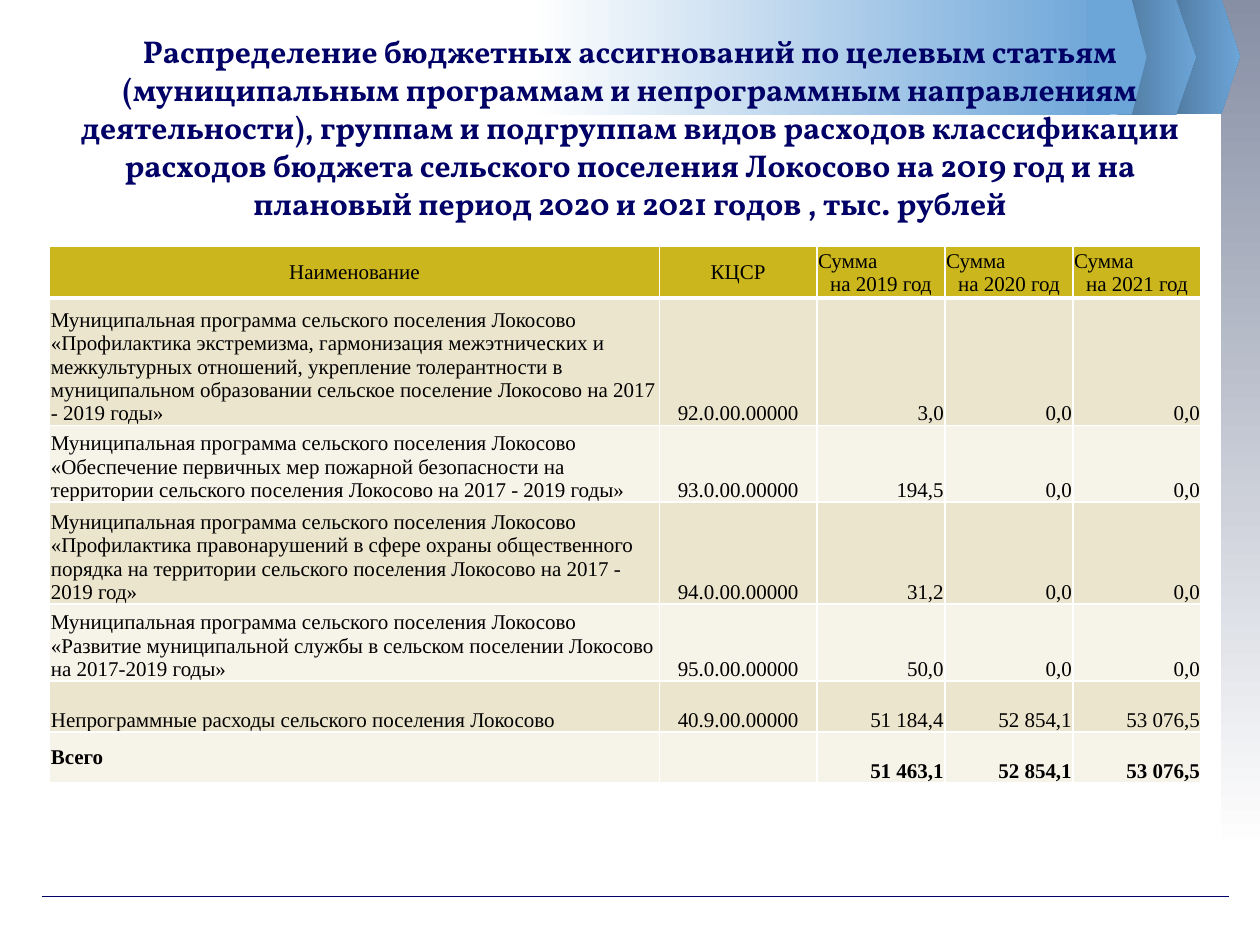
from lxml import etree
from pptx import Presentation
from pptx.dml.color import RGBColor
from pptx.enum import shapes, text
from pptx.oxml import ns
from pptx.util import Pt

NAVY = RGBColor(0x00, 0x00, 0x66)
BLACK = RGBColor(0x00, 0x00, 0x00)
WHITE = RGBColor(0xFF, 0xFF, 0xFF)
GREY = RGBColor(0x87, 0x8F, 0xA5)
STEEL = RGBColor(0x4D, 0x76, 0x9B)
SKY = RGBColor(0x6C, 0xA5, 0xD8)
GOLD = RGBColor(0xCB, 0xB6, 0x1D)
BANDS = [RGBColor(0xEC, 0xE5, 0xCD), RGBColor(0xF6, 0xF3, 0xE8)]

TITLE = (
    "Распределение бюджетных ассигнований по целевым статьям (муниципальным "
    "программам и непрограммным направлениям деятельности), группам и подгруппам "
    "видов расходов классификации расходов бюджета сельского поселения Локосово "
    "на 2019 год и на плановый период 2020 и 2021 годов , тыс. рублей"
)
PROGRAM = "Муниципальная программа сельского поселения Локосово "
BUDGET = [
    ("Наименование", "КЦСР", "Сумма\nна 2019 год", "Сумма\nна 2020 год", "Сумма\nна 2021 год"),
    (PROGRAM + "«Профилактика экстремизма, гармонизация межэтнических и межкультурных "
     "отношений, укрепление толерантности в муниципальном образовании сельское "
     "поселение Локосово на 2017 - 2019 годы»", "92.0.00.00000", "3,0", "0,0", "0,0"),
    (PROGRAM + "«Обеспечение первичных мер пожарной безопасности на территории "
     "сельского поселения Локосово на 2017 - 2019 годы»", "93.0.00.00000", "194,5", "0,0", "0,0"),
    (PROGRAM + "«Профилактика правонарушений в сфере охраны общественного порядка на "
     "территории сельского поселения Локосово на 2017 - 2019 год»",
     "94.0.00.00000", "31,2", "0,0", "0,0"),
    (PROGRAM + "«Развитие муниципальной службы в сельском поселении Локосово "
     "на 2017-2019 годы»", "95.0.00.00000", "50,0", "0,0", "0,0"),
    ("Непрограммные расходы сельского поселения Локосово", "40.9.00.00000",
     "51 184,4", "52 854,1", "53 076,5"),
    ("Всего", "", "51 463,1", "52 854,1", "53 076,5"),
]
COLUMN_WIDTHS = [348.4, 90, 73.2, 73.2, 73.2]
ROW_HEIGHTS = [29.2, 67.4, 40.6, 54.2, 40.8, 29.1, 29.1]
LEFT, CENTER, RIGHT = text.PP_ALIGN.LEFT, text.PP_ALIGN.CENTER, text.PP_ALIGN.RIGHT
ALIGNMENTS = [LEFT, CENTER, RIGHT, RIGHT, RIGHT]

RECT, PLATE = shapes.MSO_SHAPE.RECTANGLE, shapes.MSO_SHAPE.PENTAGON
DECOR = [
    (RECT, (697.7, 0, 22.3, 487.4), (GREY, WHITE), 270),
    (PLATE, (666, -0.7, 42.5, 65.9), (STEEL, SKY), 0),
    (PLATE, (638, 0, 45.3, 65.5), (STEEL, SKY), 0),
    (RECT, (303.1, 0, 331.2, 65.5), (WHITE, SKY), 0),
    (PLATE, (621.4, 0, 33.8, 65.5), (SKY, SKY), 0),
]


def add_decor(slide, kind, box, colors, angle):
    part = slide.shapes.add_shape(kind, *map(Pt, box))
    part.shadow.inherit = False
    part.line.fill.background()
    if kind == PLATE:
        part.adjustments[0] = 0.25
    if colors[0] == colors[1]:
        part.fill.solid()
        part.fill.fore_color.rgb = colors[0]
        return
    part.fill.gradient()
    part.fill.gradient_angle = angle
    for stop, color, position in zip(part.fill.gradient_stops, colors, (0, 1)):
        stop.color.rgb = color
        stop.position = position


def add_rule(slide):
    rule = slide.shapes.add_connector(
        shapes.MSO_CONNECTOR.STRAIGHT, Pt(24), Pt(512.5), Pt(702), Pt(512.5))
    rule.line.color.rgb = NAVY
    rule.line.width = Pt(0.75)
    etree.SubElement(rule._element.spPr, ns.qn("a:effectLst"))


def add_title(slide):
    title = slide.shapes.add_textbox(Pt(28.1), Pt(16.6), Pt(663.8), Pt(112.3)).text_frame
    title.word_wrap = True
    title.vertical_anchor = text.MSO_ANCHOR.MIDDLE
    title.text = TITLE
    heading = title.paragraphs[0]
    heading.alignment = CENTER
    heading.line_spacing = Pt(21.7)
    heading.font.name = "Vollkorn"
    heading.font.size = Pt(18)
    heading.font.bold = True
    heading.font.color.rgb = NAVY


def set_borders(cell, top, bottom):
    sides = [("lnL", 1), ("lnR", 1), ("lnT", top), ("lnB", bottom)]
    for order, (side, width) in enumerate(sides):
        border = etree.Element(ns.qn("a:" + side), w=str(Pt(width)))
        fill = etree.SubElement(border, ns.qn("a:solidFill"))
        etree.SubElement(fill, ns.qn("a:srgbClr"), val=str(WHITE))
        cell._tc.get_or_add_tcPr().insert(order, border)


def fill_cell(cell, words, row, column):
    header, total = row == 0, row == len(BUDGET) - 1
    cell.text = words
    cell.margin_left = cell.margin_right = cell.margin_top = Pt(0.7)
    cell.margin_bottom = 0
    middle = header or (total and column == 0)
    cell.vertical_anchor = text.MSO_ANCHOR.MIDDLE if middle else text.MSO_ANCHOR.BOTTOM
    cell.fill.solid()
    cell.fill.fore_color.rgb = GOLD if header else BANDS[(row - 1) % 2]
    set_borders(cell, 3 if row == 1 else 1, 3 if header else 1)
    for line in cell.text_frame.paragraphs:
        line.alignment = CENTER if header else ALIGNMENTS[column]
        line.font.name = "Times New Roman"
        line.font.size = Pt(12)
        line.font.bold = total
        line.font.color.rgb = BLACK
    if header and "\n" in words:
        cell.text_frame.paragraphs[0].alignment = LEFT


def add_budget(slide):
    budget = slide.shapes.add_table(
        len(BUDGET), len(COLUMN_WIDTHS), Pt(28.4), Pt(140.8),
        Pt(sum(COLUMN_WIDTHS)), Pt(sum(ROW_HEIGHTS))).table
    budget.first_row = budget.horz_banding = False
    for column, width in zip(budget.columns, COLUMN_WIDTHS):
        column.width = Pt(width)
    for row, height in zip(budget.rows, ROW_HEIGHTS):
        row.height = Pt(height)
    for row, entries in enumerate(BUDGET):
        for column, words in enumerate(entries):
            fill_cell(budget.cell(row, column), words, row, column)


def main():
    deck = Presentation()
    deck.slide_width, deck.slide_height = Pt(720), Pt(540)
    slide = deck.slides.add_slide(deck.slide_layouts[6])
    add_decor(slide, *DECOR[0])
    add_rule(slide)
    for decor in DECOR[1:]:
        add_decor(slide, *decor)
    add_title(slide)
    add_budget(slide)
    deck.save("out.pptx")


if __name__ == "__main__":
    main()
